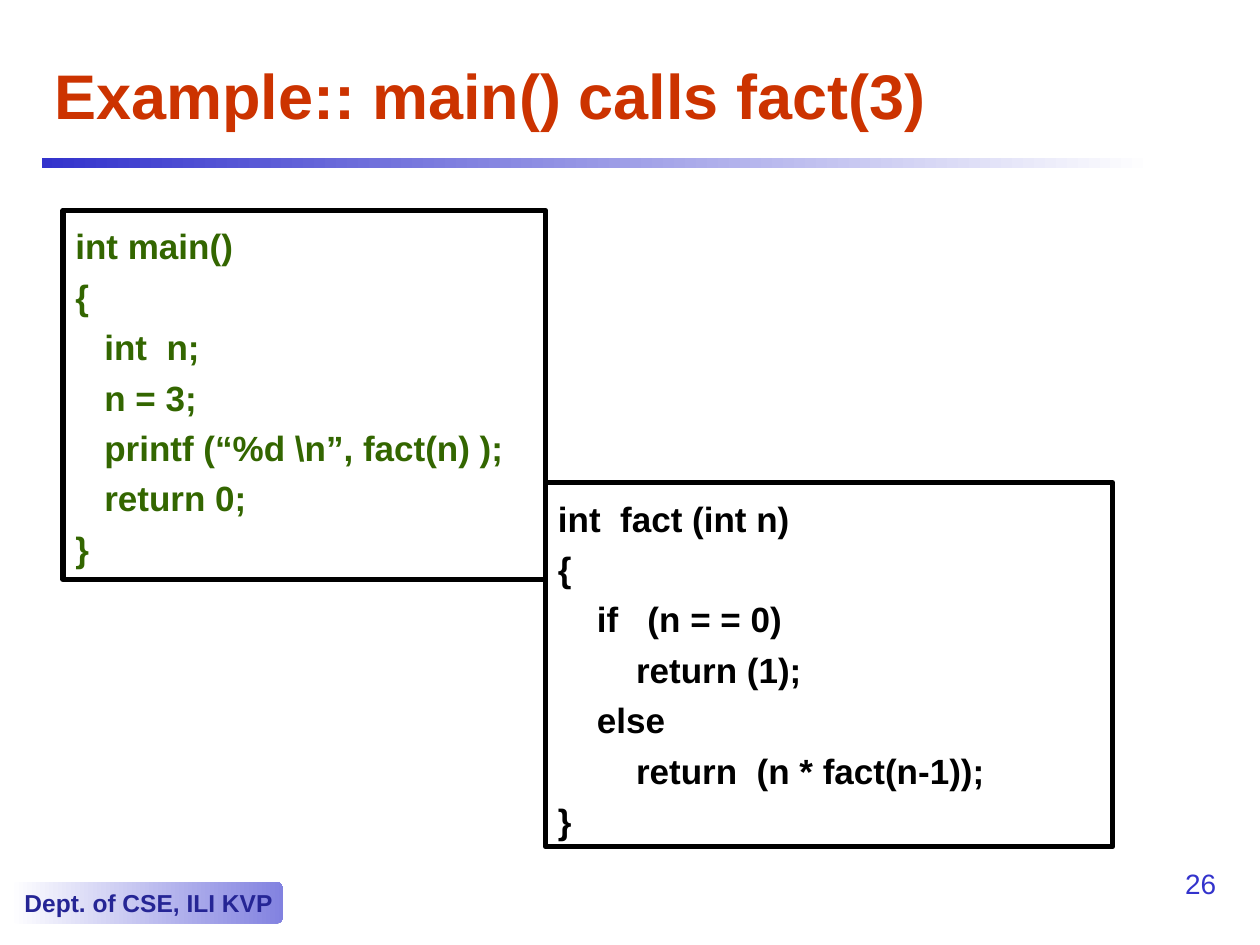
from pptx import Presentation
from pptx.dml.color import RGBColor
from pptx.enum.shapes import MSO_SHAPE
from pptx.enum.text import MSO_ANCHOR, MSO_AUTO_SIZE, PP_ALIGN
from pptx.util import Inches, Pt

BLACK = RGBColor(0x00, 0x00, 0x00)
WHITE = RGBColor(0xFF, 0xFF, 0xFF)
BLUE = RGBColor(0x33, 0x33, 0xCC)
LIGHT_BLUE = RGBColor(0x82, 0x82, 0xE0)
DARK_BLUE = RGBColor(0x25, 0x25, 0x95)
RED = RGBColor(0xCC, 0x33, 0x00)
GREEN = RGBColor(0x33, 0x66, 0x00)

MAIN_CODE = [
    (0, "int main()"),
    (0, "{"),
    (1, "int  n;"),
    (1, "n = 3;"),
    (1, "printf (“%d \\n”, fact(n) );"),
    (1, "return 0;"),
    (0, "}"),
]
FACT_CODE = [
    (0, "int  fact (int n)"),
    (0, "{"),
    (1, "if   (n = = 0)"),
    (2, "return (1);"),
    (1, "else"),
    (2, "return  (n * fact(n-1));"),
    (0, "}"),
]


def write(para, text, size, color, bold=False, align=PP_ALIGN.LEFT, spacing=None, indent=0):
    """Fill a paragraph with one formatted run."""
    para.alignment = align
    if spacing:
        para.line_spacing = spacing
    if indent:
        properties = para._p.get_or_add_pPr()
        properties.set("marL", str(indent))
        properties.set("indent", "0")
    span = para.add_run()
    span.text = text
    span.font.name = "Arial"
    span.font.size = Pt(size)
    span.font.bold = bold
    span.font.color.rgb = color


def add_gradient_bar(page, box, kind, start, end):
    """Add a borderless shape that fades from left to right."""
    bar = page.shapes.add_shape(kind, *box)
    bar.shadow.inherit = False
    bar.line.fill.background()
    bar.fill.gradient()
    bar.fill.gradient_angle = 0
    for stop, position, color in zip(bar.fill.gradient_stops, (0, 1), (start, end)):
        stop.position = position
        stop.color.rgb = color
    return bar


def add_title(page, box, text):
    """Place the title and format it."""
    title = page.shapes.title
    title.left, title.top, title.width, title.height = box
    frame = title.text_frame
    frame.vertical_anchor = MSO_ANCHOR.MIDDLE
    frame.auto_size = MSO_AUTO_SIZE.NONE
    write(frame.paragraphs[0], text, 36, RED, bold=True)


def add_footer(page, box, text):
    """Add the department badge."""
    badge = add_gradient_bar(page, box, MSO_SHAPE.ROUNDED_RECTANGLE, WHITE, LIGHT_BLUE)
    badge.adjustments[0] = 0.17
    frame = badge.text_frame
    frame.word_wrap = False
    frame.vertical_anchor = MSO_ANCHOR.MIDDLE
    write(frame.paragraphs[0], text, 14, DARK_BLUE, bold=True)


def add_page_number(page, box, text):
    """Add the page number."""
    frame = page.shapes.add_textbox(*box).text_frame
    frame.word_wrap = True
    write(frame.paragraphs[0], text, 16, BLUE, align=PP_ALIGN.RIGHT)


def add_code(page, box, lines, color, step):
    """Add a framed listing whose lines are indented by level."""
    panel = page.shapes.add_shape(MSO_SHAPE.RECTANGLE, *box)
    panel.shadow.inherit = False
    panel.fill.background()
    panel.line.color.rgb = BLACK
    panel.line.width = Pt(3)
    frame = panel.text_frame
    frame.word_wrap = True
    frame.vertical_anchor = MSO_ANCHOR.TOP
    frame.auto_size = MSO_AUTO_SIZE.SHAPE_TO_FIT_TEXT
    for number, (level, text) in enumerate(lines):
        para = frame.add_paragraph() if number else frame.paragraphs[0]
        write(para, text, 20, color, bold=True, spacing=1.2, indent=level * step)


def inches(*lengths):
    """Convert a left, top, width, height box."""
    return [Inches(length) for length in lengths]


def main():
    """Build and save the deck."""
    deck = Presentation()
    deck.slide_width, deck.slide_height = Inches(10), Inches(7.5)
    page = deck.slides.add_slide(deck.slide_layouts[5])
    add_gradient_bar(page, inches(0.33, 1.25, 8.83, 0.08), MSO_SHAPE.RECTANGLE, BLUE, WHITE)
    add_footer(page, inches(0.08, 7, 2.17, 0.33), "Dept. of CSE, ILI KVP")
    add_page_number(page, inches(9.17, 6.83, 0.58, 0.5), "26")
    add_title(page, inches(0.33, 0.33, 9.42, 0.83), "Example:: main() calls fact(3)")
    add_code(page, inches(4.33, 3.83, 4.5, 2.89), FACT_CODE, BLACK, Inches(0.31))
    add_code(page, inches(0.5, 1.67, 3.83, 2.93), MAIN_CODE, GREEN, Inches(0.23))
    deck.save("out.pptx")


if __name__ == "__main__":
    main()
